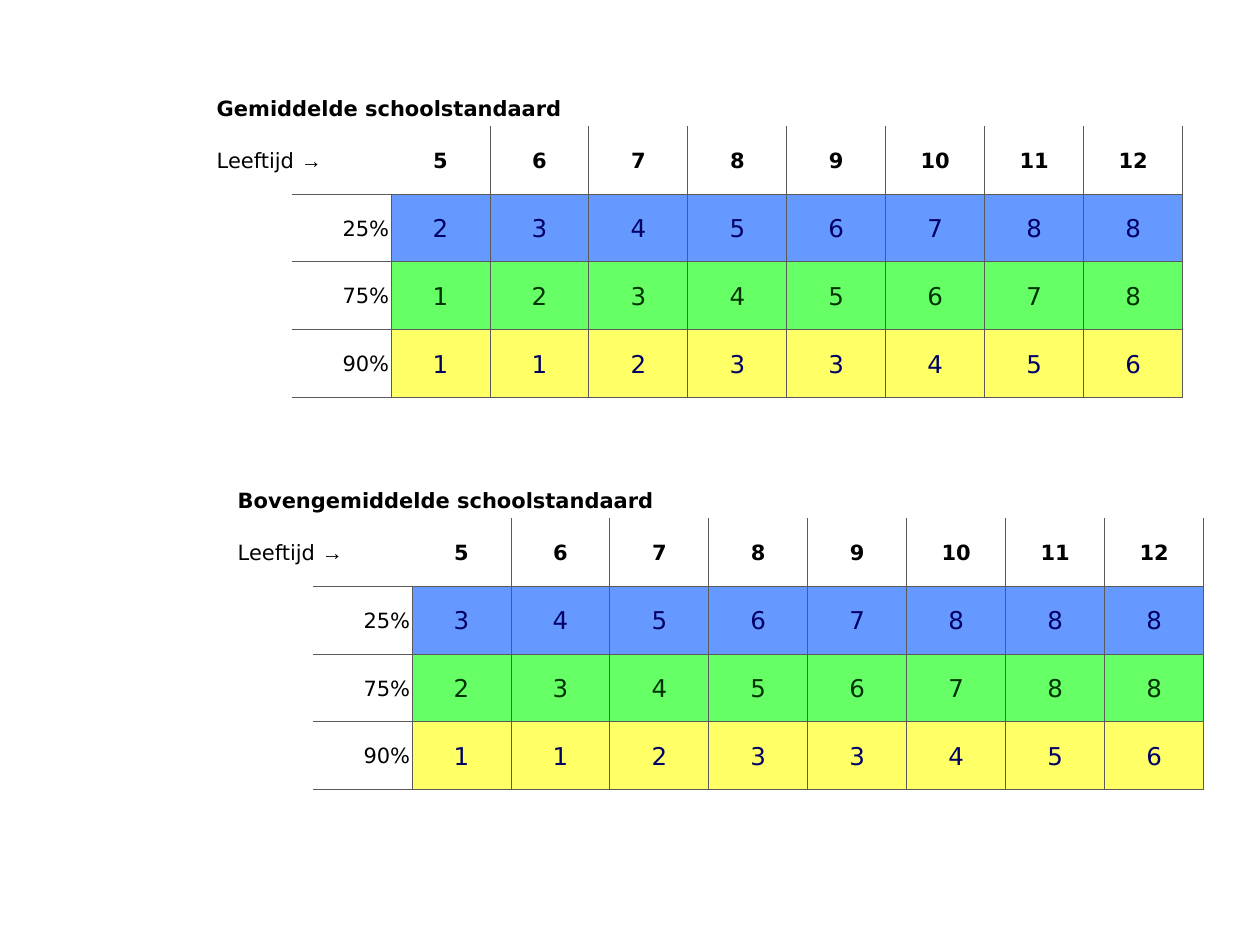
from lxml.etree import SubElement
from pptx import Presentation
from pptx.dml.color import RGBColor
from pptx.enum.text import MSO_ANCHOR, PP_ALIGN
from pptx.oxml.ns import qn
from pptx.util import Pt

EMU_PER_PX = 914400 / 126
COLORS = {
    "white": "FFFFFF", "black": "000000", "line": "5A5A5A",
    "blue": "6699FF", "green": "66FF66", "yellow": "FFFF66",
    "navy": "000066", "forest": "003300",
}
BODY_FONT, ARROW_FONT = "DejaVu Sans", "Arial"
AGES = range(5, 13)
LEVELS = [("25%", "blue", "navy"), ("75%", "green", "forest"), ("90%", "yellow", "navy")]
COLUMN_WIDTHS = [77] + [99] * 9
ROW_HEIGHTS = [36] + [68] * 4
CELL_FORMAT = {
    "vertical_anchor": MSO_ANCHOR.MIDDLE,
    "margin_left": Pt(1), "margin_right": Pt(1), "margin_top": Pt(1), "margin_bottom": 0,
}
STANDARDS = [
    ("Gemiddelde schoolstandaard", 215, 90, [
        [2, 3, 4, 5, 6, 7, 8, 8],
        [1, 2, 3, 4, 5, 6, 7, 8],
        [1, 1, 2, 3, 3, 4, 5, 6],
    ]),
    ("Bovengemiddelde schoolstandaard", 236, 482, [
        [3, 4, 5, 6, 7, 8, 8, 8],
        [2, 3, 4, 5, 6, 7, 8, 8],
        [1, 1, 2, 3, 3, 4, 5, 6],
    ]),
]


def px(length):
    return round(length * EMU_PER_PX)


def rgb(name):
    return RGBColor.from_string(COLORS[name])


def style_cell(cell, fill="white", sides=""):
    """Fill the cell and rule the sides named by letters from LRTB."""
    for name, value in CELL_FORMAT.items():
        setattr(cell, name, value)
    properties = cell._tc.get_or_add_tcPr()
    for side in "LRTB":
        line = SubElement(properties, qn(f"a:ln{side}"), w=str(Pt(0.5)))
        if side in sides:
            paint = SubElement(line, qn("a:solidFill"))
            SubElement(paint, qn("a:srgbClr"), val=COLORS["line"])
        else:
            SubElement(line, qn("a:noFill"))
    cell.fill.solid()
    cell.fill.fore_color.rgb = rgb(fill)


def add_span(cell, text, align=PP_ALIGN.LEFT, color="black", name=BODY_FONT, size=12, bold=False):
    para = cell.text_frame.paragraphs[0]
    para.alignment = align
    span = para.add_run()
    span.text = text
    for key, value in {"name": name, "size": Pt(size), "bold": bold}.items():
        setattr(span.font, key, value)
    span.font.color.rgb = rgb(color)


def add_header(table, title):
    for row, last_column in ((0, 9), (1, 1)):
        for column in range(last_column + 1):
            style_cell(table.cell(row, column))
        table.cell(row, 0).merge(table.cell(row, last_column))
    add_span(table.cell(0, 0), title, bold=True)
    add_span(table.cell(1, 0), "Leeftijd ")
    add_span(table.cell(1, 0), "→", name=ARROW_FONT, bold=True)
    for column, age in enumerate(AGES, 2):
        cell = table.cell(1, column)
        style_cell(cell, sides="RB" if column == 2 else "LRB")
        add_span(cell, str(age), PP_ALIGN.CENTER, bold=True)


def add_level(table, row, level, scores):
    label, fill, color = level
    style_cell(table.cell(row, 0))
    style_cell(table.cell(row, 1), sides="TRB")
    add_span(table.cell(row, 1), label, PP_ALIGN.RIGHT)
    for column, score in enumerate(scores, 2):
        cell = table.cell(row, column)
        style_cell(cell, fill, "LRTB")
        add_span(cell, str(score), PP_ALIGN.CENTER, color, size=14)


def add_standard(page, title, left, top, score_rows):
    table = page.shapes.add_table(
        len(ROW_HEIGHTS), len(COLUMN_WIDTHS), px(left), px(top),
        px(sum(COLUMN_WIDTHS)), px(sum(ROW_HEIGHTS))).table
    table.first_row = table.horz_banding = False
    for column, width in zip(table.columns, COLUMN_WIDTHS):
        column.width = px(width)
    for row, height in zip(table.rows, ROW_HEIGHTS):
        row.height = px(height)
    add_header(table, title)
    for row, (level, scores) in enumerate(zip(LEVELS, score_rows), 2):
        add_level(table, row, level, scores)


def main():
    deck = Presentation()
    deck.slide_width, deck.slide_height = px(1260), px(945)
    page = deck.slides.add_slide(deck.slide_layouts[6])
    for standard in STANDARDS:
        add_standard(page, *standard)
    deck.save("out.pptx")


if __name__ == "__main__":
    main()
